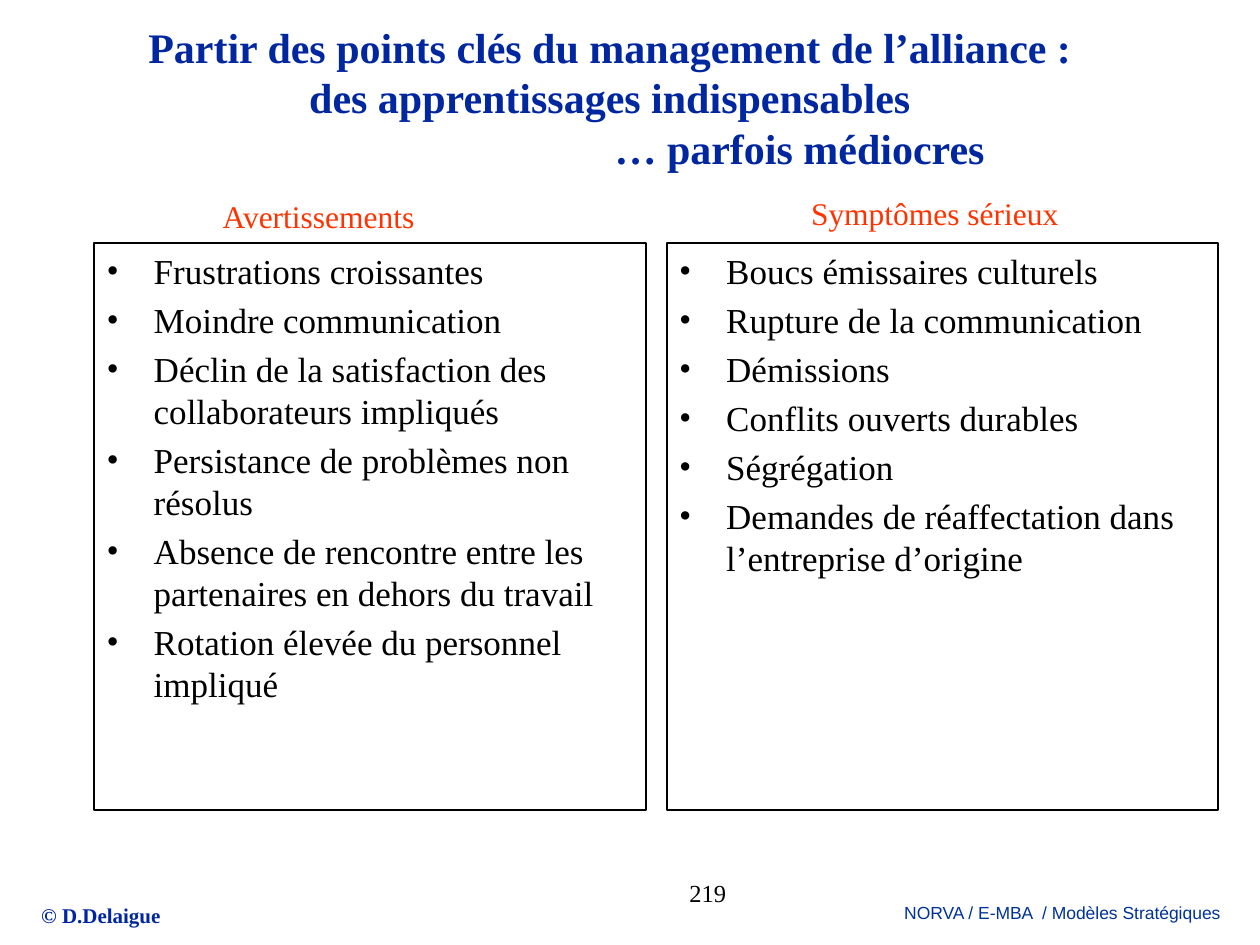
"""Build the slide on alliance management: warnings beside serious symptoms."""
from lxml import etree
from pptx import Presentation
from pptx import util as u
from pptx.dml.color import RGBColor
from pptx.enum import shapes, text
from pptx.oxml.ns import qn

BLUE = RGBColor(0x00, 0x27, 0x9F)
FOOTER_BLUE = RGBColor(0x00, 0x33, 0x99)
RED = RGBColor(0xFF, 0x33, 0x00)
BLACK = RGBColor(0, 0, 0)
SERIF = "Times New Roman"
LEFT, CENTER = text.PP_ALIGN.LEFT, text.PP_ALIGN.CENTER


def write_lines(box, lines, align, wrap, **font):
    frame = box.text_frame
    frame.word_wrap = wrap
    for index, line in enumerate(lines):
        para = frame.paragraphs[0] if index == 0 else frame.add_paragraph()
        para.alignment = align
        span = para.add_run()
        span.text = line
        span.font.color.rgb = font["color"]
        for key, value in font.items():
            if key != "color":
                setattr(span.font, key, value)
    return frame


deck = Presentation()
deck.slide_width, deck.slide_height = u.Cm(25.4), u.Cm(19.05)
page = deck.slides.add_slide(deck.slide_layouts[6])

title_box = page.shapes.add_textbox(u.Cm(1.5), u.Cm(1.07), u.Cm(21.59), u.Cm(1.78))
title_lines = [
    "Partir des points clés du management de l’alliance :",
    "des apprentissages indispensables",
    "… parfois médiocres",
]
title_font = {"name": SERIF, "size": u.Pt(24), "bold": True, "color": BLUE}
title_frame = write_lines(title_box, title_lines, CENTER, True, **title_font)
title_frame.vertical_anchor = text.MSO_ANCHOR.MIDDLE
title_frame.paragraphs[-1]._p.get_or_add_pPr().set("marL", str(u.Cm(7.65)))

columns = [
    (1.9, [
        "Frustrations croissantes",
        "Moindre communication",
        "Déclin de la satisfaction des collaborateurs impliqués",
        "Persistance de problèmes non résolus",
        "Absence de rencontre entre les partenaires en dehors du travail",
        "Rotation élevée du personnel impliqué",
    ]),
    (13.44, [
        "Boucs émissaires culturels",
        "Rupture de la communication",
        "Démissions",
        "Conflits ouverts durables",
        "Ségrégation",
        "Demandes de réaffectation dans l’entreprise d’origine",
    ]),
]
for left, items in columns:
    panel = page.shapes.add_shape(
        shapes.MSO_SHAPE.RECTANGLE, u.Cm(left), u.Cm(4.9), u.Cm(11.12), u.Cm(11.43))
    panel.shadow.inherit = False
    panel.fill.background()
    panel.line.color.rgb = BLACK
    panel.line.width = u.Pt(1)
    frame = write_lines(panel, items, LEFT, True, name=SERIF, size=u.Pt(20), color=BLACK)
    frame.vertical_anchor = text.MSO_ANCHOR.TOP
    for para in frame.paragraphs:
        para.space_before = u.Pt(4)
        props = para._p.get_or_add_pPr()
        props.set("marL", str(u.Cm(0.95)))
        props.set("indent", str(u.Cm(-0.95)))
        etree.SubElement(props, qn("a:buFont")).set("typeface", SERIF)
        etree.SubElement(props, qn("a:buChar")).set("char", "•")

labels = [
    ("Avertissements", (4.24, 3.84, 4.42, 1.02), LEFT,
     {"name": SERIF, "size": u.Pt(18), "color": RED}),
    ("Symptômes sérieux", (16.1, 3.78, 5.51, 1.02), LEFT,
     {"name": SERIF, "size": u.Pt(18), "color": RED}),
    ("219", (11.63, 17.58, 5.28, 1.27), CENTER,
     {"name": SERIF, "size": u.Pt(14), "color": BLACK}),
    ("© D.Delaigue", (0.58, 18.06, 2.92, 0.76), LEFT,
     {"name": SERIF, "size": u.Pt(12), "bold": True, "color": BLUE}),
    ("NORVA / E-MBA  / Modèles Stratégiques", (17.96, 18.06, 6.91, 0.69), CENTER,
     {"name": "Arial", "size": u.Pt(10), "color": FOOTER_BLUE}),
]
for wording, place, align, font in labels:
    label_box = page.shapes.add_textbox(*map(u.Cm, place))
    write_lines(label_box, [wording], align, False, **font)

deck.save("out.pptx")
